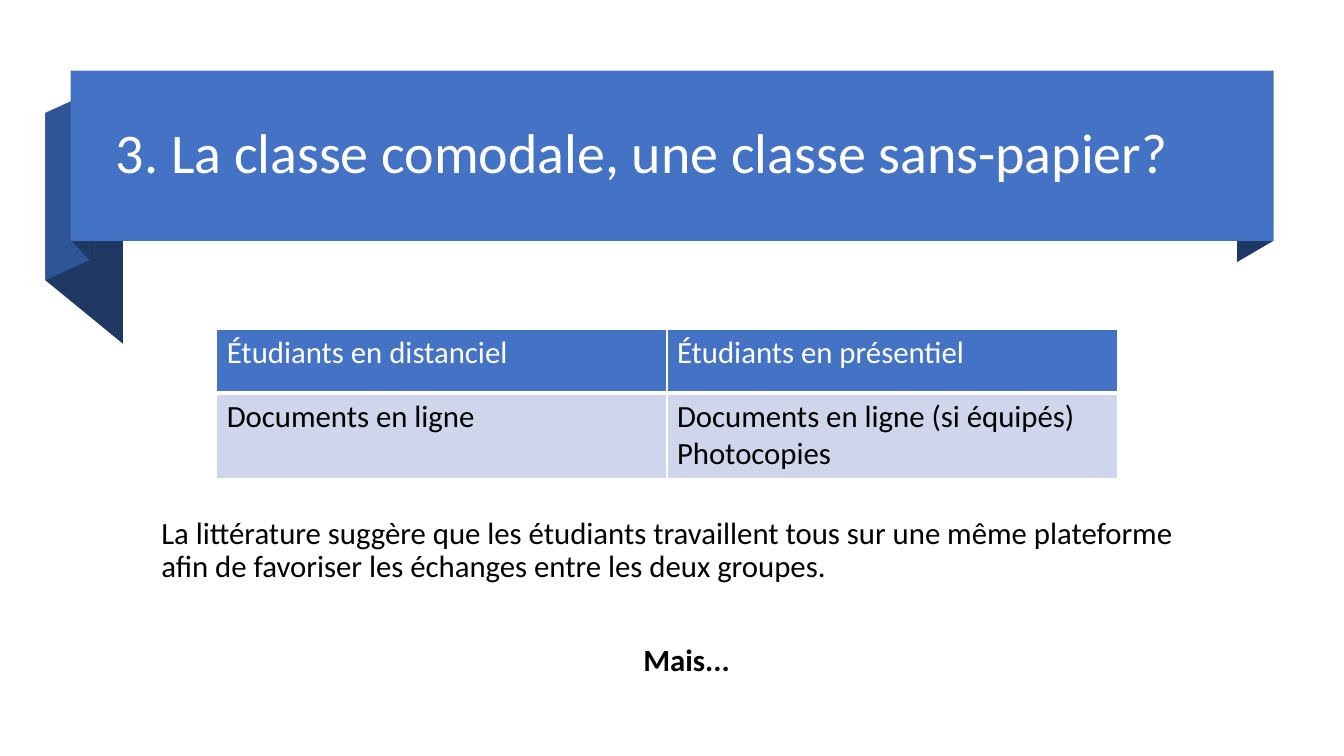
"""Build a slide with a ribbon title, a two-column table and a closing remark."""
from lxml import etree
from pptx import Presentation
from pptx.dml.color import RGBColor
from pptx.enum.shapes import MSO_SHAPE
from pptx.enum.text import MSO_ANCHOR, MSO_AUTO_SIZE, PP_ALIGN
from pptx.oxml.ns import qn
from pptx.util import Inches, Pt

RECT = MSO_SHAPE.RECTANGLE
MIDDLE, TOP = MSO_ANCHOR.MIDDLE, MSO_ANCHOR.TOP
LEFT, CENTER = PP_ALIGN.LEFT, PP_ALIGN.CENTER
FIXED = MSO_AUTO_SIZE.NONE

TITLE = "3. La classe comodale, une classe sans-papier?"
ROWS = [
    ["Étudiants en distanciel", "Étudiants en présentiel"],
    ["Documents en ligne", "Documents en ligne (si équipés)\nPhotocopies"],
]
BODY = [
    ("La littérature suggère que les étudiants travaillent tous sur une même "
     "plateforme afin de favoriser les échanges entre les deux groupes.", LEFT, 0, False),
    ("Mais...", CENTER, 43, True),
]
COLORS = {"blue": "4472C4", "mid": "2F5597", "navy": "203864",
          "pale": "CFD5EA", "white": "FFFFFF", "black": "000000"}
FONT = "Calibri"
WIDE, HIGH = 13.33, 7.5

BANNER = (0.7, 0.7, 11.93, 1.69)
FOLDS = [
    ("navy", (0.45, 1.12), (1.22, 1.75), 1.66),
    ("mid", (0.45, 1.12), (0.89, 0.92), 1.66),
    ("navy", (0.71, 0.7), (0.89, 0.89), 1.69),
    ("navy", (12.27, 0.91), (12.63, 0.7), 1.69),
]
TITLE_BOX = (1.05, 0.88, 11.23, 1.33)
BODY_BOX = (1.5, 5.09, 10.62, 1.75)
GRID = (2.15, 3.27, 8.93, 1.46)
HEIGHTS = [0.63, 0.83]
HEAD = [("blue", "white", 3), ("pale", "black", 1)]


def tint(name):
    return RGBColor.from_string(COLORS[name])


def paint(shape, name):
    shape.shadow.inherit = False
    shape.fill.solid()
    shape.fill.fore_color.rgb = tint(name)
    shape.line.fill.background()


def style(para, size, name, bold=False):
    for run in para.runs:
        font = run.font
        font.name, font.size, font.bold = FONT, Pt(size), bold
        font.color.rgb = tint(name)


def place(shape, box):
    shape.left, shape.top, shape.width, shape.height = map(Inches, box)


def edge(cell, base):
    props = cell._tc.get_or_add_tcPr()
    sides = [("lnL", 1), ("lnR", 1), ("lnT", 1), ("lnB", base)]
    for spot, (side, width) in enumerate(sides):
        line = etree.Element(qn("a:" + side), w=str(Pt(width)))
        fill = etree.SubElement(line, qn("a:solidFill"))
        etree.SubElement(fill, qn("a:srgbClr"), val=COLORS["white"])
        props.insert(spot, line)


def add_ribbon(slide):
    for name, (left, near), (right, far), drop in FOLDS:
        pen = slide.shapes.build_freeform(Inches(left), Inches(near), 1.0)
        rest = [(right, far), (right, far + drop), (left, near + drop)]
        pen.add_line_segments([(Inches(x), Inches(y)) for x, y in rest])
        paint(pen.convert_to_shape(), name)
    paint(slide.shapes.add_shape(RECT, *map(Inches, BANNER)), "blue")


def add_title(slide):
    title = slide.shapes.title
    title.element.getparent().append(title.element)
    place(title, TITLE_BOX)
    frame = title.text_frame
    frame.text = TITLE
    frame.auto_size, frame.vertical_anchor = FIXED, MIDDLE
    para = frame.paragraphs[0]
    para.alignment, para.line_spacing = LEFT, 0.9
    style(para, 40, "white")


def add_body(slide):
    body = slide.placeholders[1]
    place(body, BODY_BOX)
    frame = body.text_frame
    frame.text = "\n".join(item[0] for item in BODY)
    frame.auto_size, frame.vertical_anchor = FIXED, TOP
    for para, (_, align, gap, bold) in zip(frame.paragraphs, BODY):
        para.alignment, para.line_spacing = align, 0.9
        para.space_before = Pt(gap)
        props = para._p.get_or_add_pPr()
        props.set("marL", "0")
        props.set("indent", "0")
        etree.SubElement(props, qn("a:buNone"))
        style(para, 22, "black", bold)


def add_grid(slide):
    table = slide.shapes.add_table(len(ROWS), len(ROWS[0]), *map(Inches, GRID)).table
    for r, (texts, (back, ink, base)) in enumerate(zip(ROWS, HEAD)):
        table.rows[r].height = Inches(HEIGHTS[r])
        for c, text in enumerate(texts):
            cell = table.cell(r, c)
            cell.text = text
            cell.fill.solid()
            cell.fill.fore_color.rgb = tint(back)
            edge(cell, base)
            for para in cell.text_frame.paragraphs:
                style(para, 22, ink)


def main():
    deck = Presentation()
    deck.slide_width, deck.slide_height = Inches(WIDE), Inches(HIGH)
    slide = deck.slides.add_slide(deck.slide_layouts[1])
    add_ribbon(slide)
    add_title(slide)
    add_body(slide)
    add_grid(slide)
    deck.save("out.pptx")


if __name__ == "__main__":
    main()
